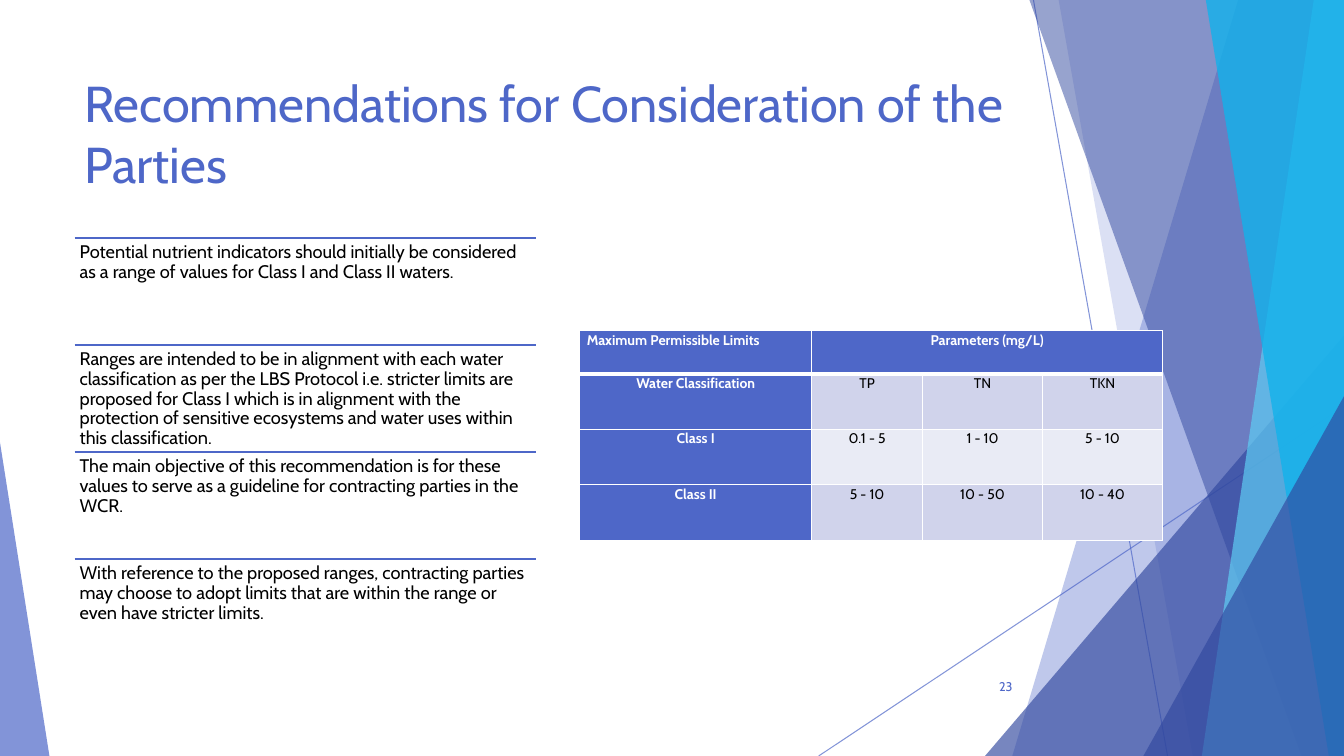
from collections import namedtuple
from dataclasses import dataclass

from lxml import etree
from pptx import Presentation
from pptx.dml.color import RGBColor
from pptx.enum.shapes import MSO_CONNECTOR, MSO_SHAPE
from pptx.enum.text import MSO_ANCHOR, PP_ALIGN
from pptx.oxml.ns import qn
from pptx.util import Inches, Pt

STRAIGHT = MSO_CONNECTOR.STRAIGHT
TRIANGLE = MSO_SHAPE.ISOSCELES_TRIANGLE
TOP, MIDDLE = MSO_ANCHOR.TOP, MSO_ANCHOR.MIDDLE
LEFT, CENTER, RIGHT, JUSTIFY = PP_ALIGN.LEFT, PP_ALIGN.CENTER, PP_ALIGN.RIGHT, PP_ALIGN.JUSTIFY

Box = namedtuple("Box", "left top width height")


@dataclass(frozen=True)
class Theme:
    font: str = "Cabin"
    blue: str = "4E67C8"
    navy: str = "31489F"
    sky: str = "5ECCF3"
    cyan: str = "12B2EB"
    band_dark: str = "D0D3EB"
    band_light: str = "E9EBF5"
    black: str = "000000"
    white: str = "FFFFFF"
    title_size: float = 36
    point_size: float = 13
    table_size: float = 10
    number_size: float = 9


THEME = Theme()
PAGE = Box(0, 0, 13.33, 7.5)

RECOMMENDATIONS = [
    "Potential nutrient indicators should initially be considered as a range of values "
    "for Class I and Class II waters.",
    "Ranges are intended to be in alignment with each water classification as per the LBS "
    "Protocol i.e. stricter limits are proposed for Class I which is in alignment with the "
    "protection of sensitive ecosystems and water uses within this classification.",
    "The main objective of this recommendation is for these values to serve as a guideline "
    "for contracting parties in the WCR.",
    "With reference to the proposed ranges, contracting parties may choose to adopt limits "
    "that are within the range or even have stricter limits.",
]
LIMITS = [
    ["Maximum Permissible Limits", "Parameters (mg/L)", "", ""],
    ["Water Classification", "TP", "TN", "TKN"],
    ["Class I", "0.1 - 5", "1 - 10", "5 - 10"],
    ["Class II", "5 - 10", "10 - 50", "10 - 40"],
]
COLUMN_WIDTHS = [2.3, 1.1, 1.19, 1.19]
ROW_HEIGHTS = [0.43, 0.55, 0.55, 0.55]


def set_alpha(fill_parent, percent):
    colour = fill_parent.find(".//" + qn("a:srgbClr"))
    etree.SubElement(colour, qn("a:alpha"), val=str(percent * 1000))


def paint(shape, colour, opacity):
    shape.shadow.inherit = False
    shape.fill.solid()
    shape.fill.fore_color.rgb = RGBColor.from_string(colour)
    set_alpha(shape.fill._xPr.find(qn("a:solidFill")), opacity)
    shape.line.fill.background()


def add_rule(slide, start, end, width, opacity=100):
    rule = slide.shapes.add_connector(STRAIGHT, *(Inches(v) for v in (*start, *end)))
    rule.line.color.rgb = RGBColor.from_string(THEME.blue)
    rule.line.width = Pt(width)
    properties = rule._element.spPr
    if opacity < 100:
        set_alpha(properties, opacity)
    etree.SubElement(properties, qn("a:effectLst"))


def format_text(frame, text, size, colour, align=LEFT, bold=False, spacing=None):
    frame.text = text
    frame.word_wrap = True
    paragraph = frame.paragraphs[0]
    paragraph.alignment = align
    if spacing:
        paragraph.line_spacing = spacing
    for run in paragraph.runs:
        run.font.name = THEME.font
        run.font.size = Pt(size)
        run.font.bold = bold
        run.font.color.rgb = RGBColor.from_string(colour)


def add_text(slide, box, text, size, colour, align=LEFT, anchor=TOP, side_inset=0.1, spacing=None):
    frame = slide.shapes.add_textbox(*map(Inches, box)).text_frame
    frame.margin_left = frame.margin_right = Inches(side_inset)
    frame.margin_top = frame.margin_bottom = Inches(0.05)
    frame.vertical_anchor = anchor
    format_text(frame, text, size, colour, align, spacing=spacing)


def add_backdrop(slide, box):
    """Translucent facets along the right edge and a wedge at the lower left."""
    right, bottom = box.left + box.width, box.top + box.height

    def facet(top_reach, bottom_reach, colour, opacity):
        corners = [(right, box.top), (right, bottom), (right - bottom_reach, bottom)]
        outline = slide.shapes.build_freeform(Inches(right - top_reach), Inches(box.top))
        outline.add_line_segments([(Inches(x), Inches(y)) for x, y in corners], close=True)
        paint(outline.convert_to_shape(), colour, opacity)

    def wedge(left, width, height, apex, colour, opacity):
        area = Box(left, bottom - height, width, height)
        corner = slide.shapes.add_shape(TRIANGLE, *map(Inches, area))
        corner.adjustments[0] = apex
        paint(corner, colour, opacity)

    add_rule(slide, (right - 3.08, box.top), (right - 1.75, bottom), 0.75, 70)
    add_rule(slide, (right, bottom - 3.47), (right - 5.21, bottom), 0.75, 70)
    facet(1.05, 3.29, THEME.blue, 36)
    facet(2.83, 1.5, THEME.blue, 20)
    wedge(right - 3.56, 3.56, 4.17, 1, THEME.navy, 66)
    facet(3.12, 0.42, THEME.navy, 50)
    facet(0.3, 1.41, THEME.sky, 70)
    facet(1.37, 0.15, THEME.cyan, 80)
    wedge(right - 1.99, 1.99, 3.57, 1, THEME.navy, 66)
    wedge(box.left, 0.49, 3.11, 0, THEME.blue, 70)


def add_recommendations(slide, box):
    """Equal rows, each with a rule on top."""
    height = box.height / len(RECOMMENDATIONS)
    for index, recommendation in enumerate(RECOMMENDATIONS):
        top = box.top + index * height
        add_rule(slide, (box.left, top), (box.left + box.width, top), 1.5)
        add_text(slide, Box(box.left, top, box.width, height), recommendation,
                 THEME.point_size, THEME.black, side_inset=0.05, spacing=0.9)


def set_borders(cell, widths):
    properties = cell._tc.get_or_add_tcPr()
    for position, (side, width) in enumerate(widths.items()):
        border = etree.Element(qn("a:" + side), w=str(Pt(width)))
        fill = etree.SubElement(border, qn("a:solidFill"))
        etree.SubElement(fill, qn("a:srgbClr"), val=THEME.white)
        properties.insert(position, border)


def add_limits_table(slide, box):
    table = slide.shapes.add_table(len(LIMITS), len(COLUMN_WIDTHS), *map(Inches, box)).table
    for column, width in zip(table.columns, COLUMN_WIDTHS):
        column.width = Inches(width)
    for row, height in zip(table.rows, ROW_HEIGHTS):
        row.height = Inches(height)
    table.cell(0, 1).merge(table.cell(0, 3))

    for r, values in enumerate(LIMITS):
        for c, value in enumerate(values):
            cell = table.cell(r, c)
            heading = r == 0 or c == 0
            band = THEME.band_dark if r % 2 else THEME.band_light
            cell.fill.solid()
            cell.fill.fore_color.rgb = RGBColor.from_string(THEME.blue if heading else band)
            cell.margin_left = cell.margin_right = Inches(0.07)
            cell.margin_top = cell.margin_bottom = 0
            cell.vertical_anchor = TOP
            set_borders(cell, {"lnL": 1, "lnR": 1, "lnT": 3 if r == 1 else 1,
                               "lnB": 3 if r == 0 else 1})
            format_text(cell.text_frame, value, THEME.table_size,
                        THEME.white if heading else THEME.black,
                        JUSTIFY if r == c == 0 else CENTER, heading, 1.07)


def build_recommendations_slide(presentation):
    slide = presentation.slides.add_slide(presentation.slide_layouts[6])
    add_backdrop(slide, PAGE)
    add_text(slide, Box(0.74, 0.67, 9.4, 1.44),
             "Recommendations for Consideration of the Parties", THEME.title_size, THEME.blue)
    add_recommendations(slide, Box(0.74, 2.36, 4.58, 4.25))
    add_limits_table(slide, Box(5.75, 3.28, sum(COLUMN_WIDTHS), sum(ROW_HEIGHTS)))
    add_text(slide, Box(9.39, 6.61, 0.75, 0.4), "23", THEME.number_size, THEME.blue,
             RIGHT, MIDDLE)


def main():
    presentation = Presentation()
    presentation.slide_width = Inches(PAGE.width)
    presentation.slide_height = Inches(PAGE.height)
    build_recommendations_slide(presentation)
    presentation.save("out.pptx")


if __name__ == "__main__":
    main()
